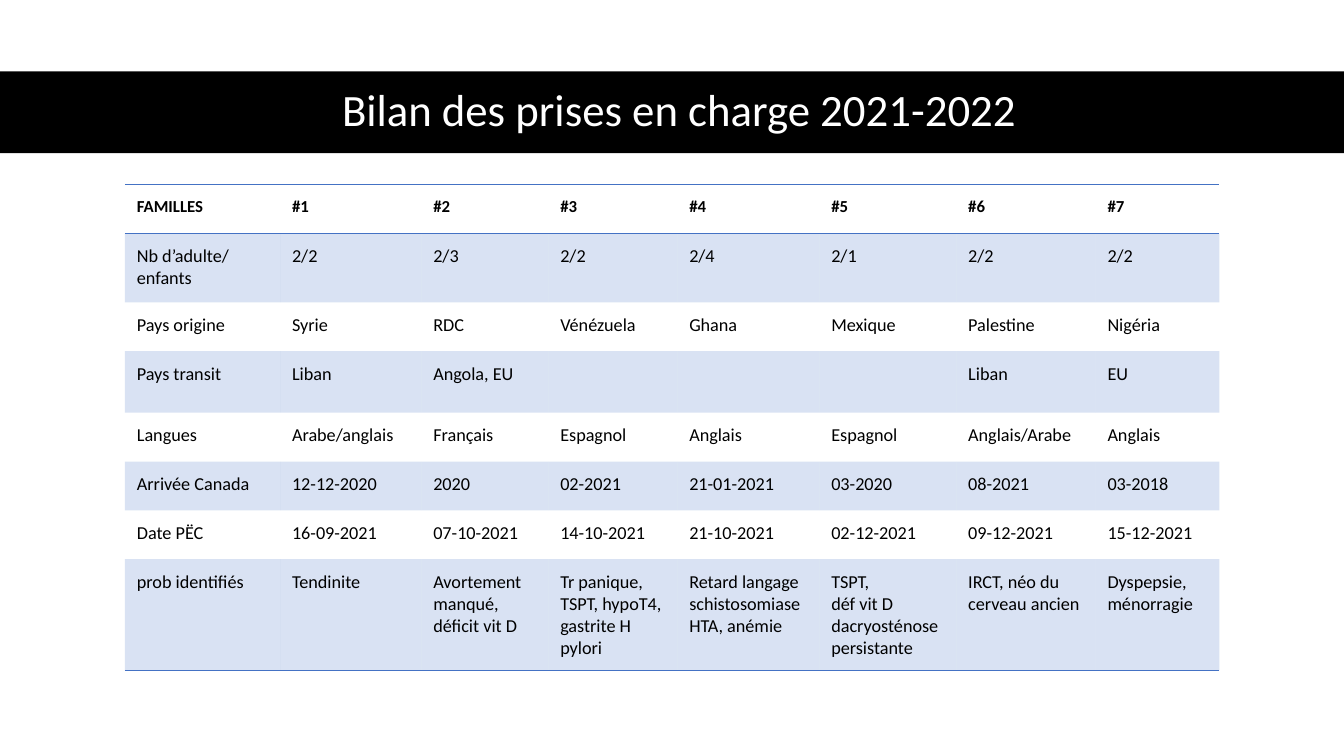
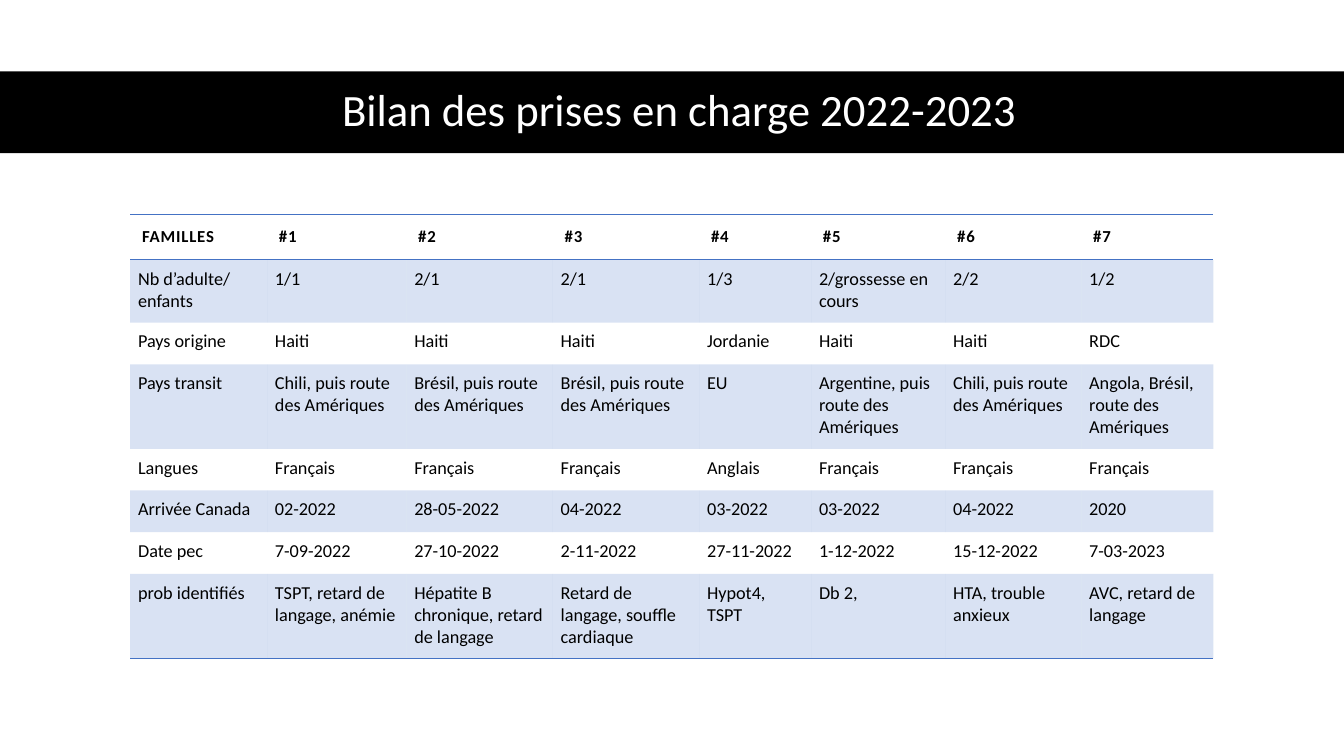
from dataclasses import dataclass

from lxml.etree import SubElement
from pptx import Presentation
from pptx.dml.color import RGBColor
from pptx.enum.shapes import MSO_SHAPE as Shape
from pptx.enum.text import MSO_ANCHOR as Anchor, PP_ALIGN as Align
from pptx.oxml import parse_xml
from pptx.oxml.ns import nsdecls, qn
from pptx.util import Cm, Pt


@dataclass(frozen=True)
class Theme:
    font: str = "Calibri"
    black: str = "000000"
    white: str = "FFFFFF"
    accent: str = "4472C4"
    band_alpha: int = 20
    rule_width: float = 1
    title_size: int = 32
    header_size: int = 12
    body_size: int = 13


THEME = Theme()
SLIDE_SIZE = (33.87, 19.05)
TITLE_BAND = (0, 1.8, 33.87, 2.06)
TITLE_BOX = (1.55, 1.78, 31.14, 2.06)
NO_GRID_STYLE = "{2D5ABB26-0587-4C30-8999-92F81FD0307C}"
HEADER = ["FAMILLES"] + [f"#{number}" for number in range(1, 8)]

REPORTS = [
    dict(
        title="Bilan des prises en charge 2021-2022",
        corner=(3.15, 4.65),
        widths=[3.91, 3.56, 3.2, 3.25, 3.58, 3.45, 3.51, 3.12],
        heights=[1.23, 1.74, 1.23, 1.55, 1.23, 1.23, 1.23, 2.8],
        header_inset=0.3,
        body_inset=0.3,
        header_spacing=0,
        rows=[
            ["Nb d’adulte/\nenfants", "2/2", "2/3", "2/2", "2/4", "2/1", "2/2", "2/2"],
            ["Pays origine", "Syrie", "RDC", "Vénézuela", "Ghana", "Mexique",
             "Palestine", "Nigéria"],
            ["Pays transit", "Liban", "Angola, EU", "", "", "", "Liban", "EU"],
            ["Langues", "Arabe/anglais", "Français", "Espagnol", "Anglais", "Espagnol",
             "Anglais/Arabe", "Anglais"],
            ["Arrivée Canada", "12-12-2020", "2020", "02-2021", "21-01-2021", "03-2020",
             "08-2021", "03-2018"],
            ["Date PËC", "16-09-2021", "07-10-2021", "14-10-2021", "21-10-2021",
             "02-12-2021", "09-12-2021", "15-12-2021"],
            ["prob identifiés", "Tendinite", "Avortement manqué, déficit vit D",
             "Tr panique, TSPT, hypoT4,\ngastrite H pylori",
             "Retard langage\nschistosomiase\nHTA, anémie",
             "TSPT,\ndéf vit D\ndacryosténose persistante",
             "IRCT, néo du cerveau ancien", "Dyspepsie, ménorragie"],
        ],
    ),
    dict(
        title="Bilan des prises en charge 2022-2023",
        corner=(3.28, 5.4),
        widths=[3.45, 3.51, 3.69, 3.69, 2.82, 3.38, 3.43, 3.33],
        heights=[1.15, 1.58, 1.05, 2.13, 1.05, 1.05, 1.05, 2.13],
        header_inset=0.3,
        body_inset=0.2,
        header_spacing=0.6,
        rows=[
            ["Nb d’adulte/\nenfants", "1/1", "2/1", "2/1", "1/3", "2/grossesse en cours",
             "2/2", "1/2"],
            ["Pays origine", "Haiti", "Haiti", "Haiti", "Jordanie", "Haiti", "Haiti", "RDC"],
            ["Pays transit", "Chili, puis route des Amériques",
             "Brésil, puis route des Amériques", "Brésil, puis route des Amériques", "EU",
             "Argentine, puis route des Amériques", "Chili, puis route des Amériques",
             "Angola, Brésil, route des Amériques"],
            ["Langues", "Français", "Français", "Français", "Anglais", "Français",
             "Français", "Français"],
            ["Arrivée Canada", "02-2022", "28-05-2022", "04-2022", "03-2022", "03-2022",
             "04-2022", "2020"],
            ["Date pec", "7-09-2022", "27-10-2022", "2-11-2022", "27-11-2022", "1-12-2022",
             "15-12-2022", "7-03-2023"],
            ["prob identifiés", "TSPT, retard de langage, anémie",
             "Hépatite B chronique, retard de langage",
             "Retard de langage, souffle cardiaque", "Hypot4, TSPT", "Db 2,",
             "HTA, trouble anxieux", "AVC, retard de langage"],
        ],
    ),
]


def color(value):
    return RGBColor.from_string(value)


def write(frame, text, *, size, ink=THEME.black, bold=False, align=Align.LEFT,
          line_spacing=None, letter_spacing=0):
    frame.word_wrap = True
    for index, line in enumerate(text.split("\n")):
        paragraph = frame.add_paragraph() if index else frame.paragraphs[0]
        paragraph.alignment = align
        paragraph.line_spacing = line_spacing
        paragraph.font.size = Pt(size)
        if not line:
            continue
        run = paragraph.add_run()
        run.text = line
        run.font.name = THEME.font
        run.font.size = Pt(size)
        run.font.bold = bold
        run.font.color.rgb = color(ink)
        if letter_spacing:
            run.font._element.set("spc", str(round(letter_spacing * 100)))


def add_title(slide, title):
    band = slide.shapes.add_shape(Shape.RECTANGLE, *map(Cm, TITLE_BAND))
    band.shadow.inherit = False
    band.fill.solid()
    band.fill.fore_color.rgb = color(THEME.black)
    band.line.fill.background()
    heading = slide.shapes.add_textbox(*map(Cm, TITLE_BOX)).text_frame
    heading.vertical_anchor = Anchor.MIDDLE
    write(heading, title, size=THEME.title_size, ink=THEME.white,
          align=Align.CENTER, line_spacing=0.9)


def shade(cell, banded):
    if not banded:
        cell.fill.background()
        return
    cell.fill.solid()
    cell.fill.fore_color.rgb = color(THEME.accent)
    tint = cell._tc.tcPr.find(f"{qn('a:solidFill')}/{qn('a:srgbClr')}")
    SubElement(tint, qn("a:alpha")).set("val", str(THEME.band_alpha * 1000))


def rule(cell, sides):
    for position, side in enumerate(sides):
        cell._tc.tcPr.insert(position, parse_xml(
            f'<a:ln{side} {nsdecls("a")} w="{Pt(THEME.rule_width)}"><a:solidFill>'
            f'<a:srgbClr val="{THEME.accent}"/></a:solidFill></a:ln{side}>'))


def add_families(slide, report):
    rows = [HEADER] + report["rows"]
    widths, heights = report["widths"], report["heights"]
    families = slide.shapes.add_table(
        len(rows), len(HEADER), *map(Cm, report["corner"]),
        Cm(sum(widths)), Cm(sum(heights))).table
    families.first_row = families.horz_banding = False
    families._tbl.tblPr.find(qn("a:tableStyleId")).text = NO_GRID_STYLE
    for column, width in zip(families.columns, widths):
        column.width = Cm(width)
    for row, height in zip(families.rows, heights):
        row.height = Cm(height)
    sides = {0: "TB", len(rows) - 1: "B"}
    for r, row in enumerate(rows):
        header = r == 0
        inset = Cm(report["header_inset" if header else "body_inset"])
        for c, text in enumerate(row):
            cell = families.cell(r, c)
            cell.margin_left = cell.margin_right = inset
            cell.margin_top = cell.margin_bottom = inset
            write(cell.text_frame, text, bold=header,
                  size=THEME.header_size if header else THEME.body_size,
                  letter_spacing=report["header_spacing"] if header else 0)
            shade(cell, banded=r % 2 == 1)
            rule(cell, sides.get(r, ""))


def main():
    deck = Presentation()
    deck.slide_width, deck.slide_height = map(Cm, SLIDE_SIZE)
    for report in REPORTS:
        slide = deck.slides.add_slide(deck.slide_layouts[6])
        add_title(slide, report["title"])
        add_families(slide, report)
    deck.save("out.pptx")


if __name__ == "__main__":
    main()
